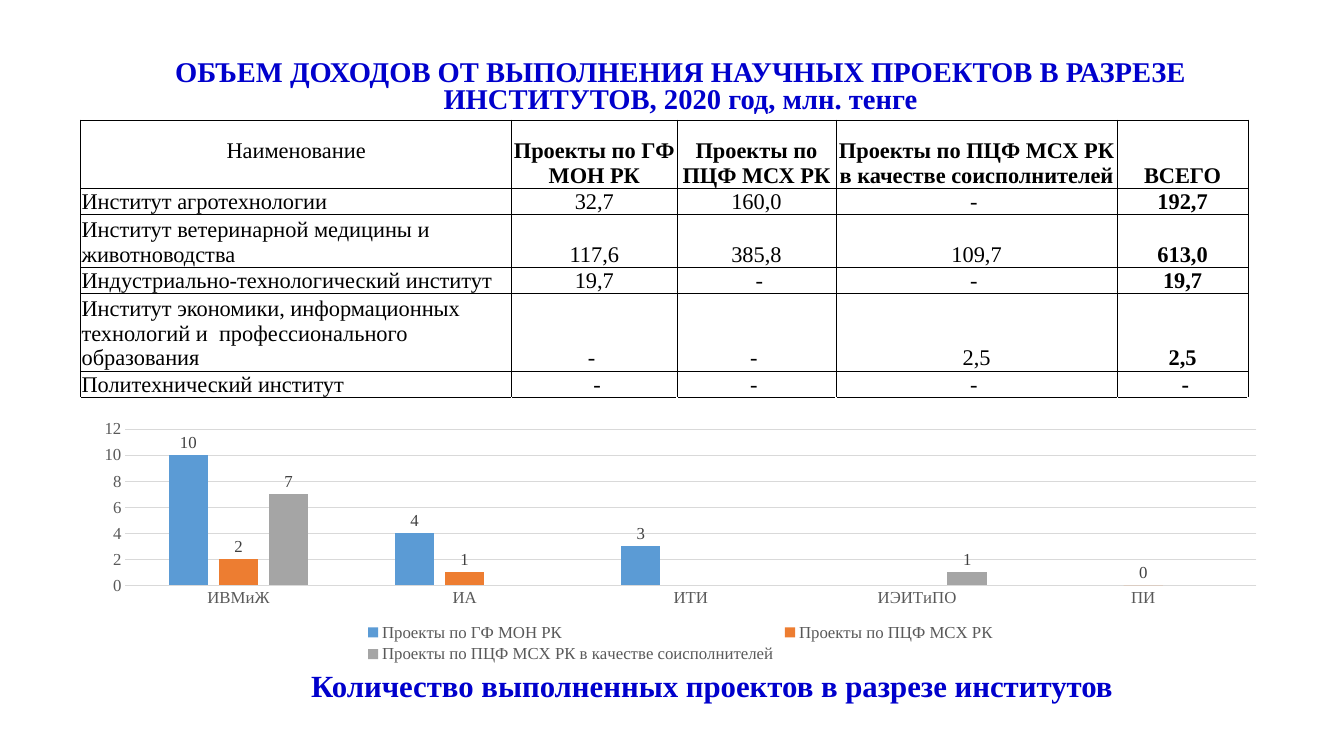
from lxml.etree import SubElement
from pptx import Presentation
from pptx.chart.data import CategoryChartData as ChartData
from pptx.dml.color import RGBColor as Rgb
from pptx.enum.chart import XL_CHART_TYPE as Kind, XL_LABEL_POSITION as Spot
from pptx.enum.chart import XL_LEGEND_POSITION as Side, XL_TICK_MARK as Tick
from pptx.enum.text import MSO_ANCHOR as Anchor, PP_ALIGN as Align
from pptx.oxml.ns import qn
from pptx.util import Inches, Pt

FACE = "Times New Roman"
COLORS = {"head": "0000CC", "text": "000000", "paper": "FFFFFF", "axis": "595959",
          "label": "404040", "grid": "D9D9D9"}
WIDE, HIGH = Inches(13.33), Inches(7.5)

FUNDS = ["Проекты по ГФ МОН РК", "Проекты по ПЦФ МСХ РК",
         "Проекты по ПЦФ МСХ РК в качестве соисполнителей"]
ROWS = [
    [" Наименование ", *FUNDS, "ВСЕГО"],
    ["Институт агротехнологии", "32,7", "160,0", "- ", "192,7"],
    ["Институт ветеринарной медицины и животноводства",
     "117,6", "385,8", "109,7", "613,0"],
    ["Индустриально-технологический институт", "19,7", " -", "- ", "19,7"],
    ["Институт экономики, информационных технологий и  профессионального образования",
     "- ", "- ", "2,5", "2,5"],
    ["Политехнический институт", " -", "- ", "- ", " -"],
    [""] * 5,
]
COLS = [4.28, 1.64, 1.58, 2.79, 1.3]
TALL = [0.68, 0.26, 0.52, 0.26, 0.77, 0.26, 0.26]
UNITS = ["ИВМиЖ", "ИА", "ИТИ", "ИЭИТиПО", "ПИ"]
COUNTS = [("5B9BD5", [10, 4, 3, None, None]),
          ("ED7D31", [2, 1, None, None, 0]),
          ("A5A5A5", [7, None, None, 1, None])]


def area(left, top, width, height):
    """Turn percentages of the slide into a box."""
    return (int(WIDE * left / 100), int(HIGH * top / 100),
            int(WIDE * width / 100), int(HIGH * height / 100))


def style(font, size, color, bold=False):
    font.name, font.size, font.bold = FACE, Pt(size), bold
    font.color.rgb = Rgb.from_string(COLORS[color])


def add_run(para, text, size, color, bold=False):
    run = para.add_run()
    run.text = text
    style(run.font, size, color, bold)


def add_head(shape, box, text, size, gap, anchor):
    shape.left, shape.top, shape.width, shape.height = box
    frame = shape.text_frame
    frame.word_wrap = True
    frame.vertical_anchor = anchor
    para = frame.paragraphs[0]
    para.alignment, para.line_spacing = Align.CENTER, gap
    add_run(para, text, size, "head", True)


def add_edges(cell, sides):
    props = cell._tc.get_or_add_tcPr()
    for side in sides:
        line = SubElement(props, qn("a:ln" + side), w=str(Pt(0.5)))
        fill = SubElement(line, qn("a:solidFill"))
        SubElement(fill, qn("a:srgbClr"), val=COLORS["text"])


def fill_cell(cell, text, row, col):
    last = row == len(ROWS) - 1
    add_edges(cell, "T" if last else "LRTB")
    cell.fill.solid()
    cell.fill.fore_color.rgb = Rgb.from_string(COLORS["paper"])
    cell.margin_left = cell.margin_right = cell.margin_top = Inches(0.01)
    corner = row == col == 0
    cell.margin_bottom = Inches(0.25 if corner else 0)
    cell.vertical_anchor = Anchor.BOTTOM
    para = cell.text_frame.paragraphs[0]
    para.alignment = Align.CENTER if col or corner else Align.LEFT
    if text:
        bold = col == len(COLS) - 1 or (row == 0 and col > 0)
        add_run(para, text, 16, "text", bold)


def add_income(slide, box):
    table = slide.shapes.add_table(len(ROWS), len(COLS), *box).table
    table.first_row = table.horz_banding = False
    for col, part in zip(table.columns, COLS):
        col.width = int(box[2] * part / sum(COLS))
    for row, part in zip(table.rows, TALL):
        row.height = int(box[3] * part / sum(TALL))
    for r, texts in enumerate(ROWS):
        for c, text in enumerate(texts):
            fill_cell(table.cell(r, c), text, r, c)


def rule(line):
    line.color.rgb = Rgb.from_string(COLORS["grid"])
    line.width = Pt(0.75)


def add_counts(slide, box):
    data = ChartData()
    data.categories = UNITS
    for name, (_, vals) in zip(FUNDS, COUNTS):
        data.add_series(name, vals)
    chart = slide.shapes.add_chart(Kind.COLUMN_CLUSTERED, *box, data).chart
    style(chart.font, 12, "text")
    chart.has_title = False
    chart.has_legend = True
    chart.legend.position = Side.BOTTOM
    chart.legend.include_in_layout = False
    style(chart.legend.font, 12, "axis")
    cats, vals = chart.category_axis, chart.value_axis
    for axis in (cats, vals):
        axis.major_tick_mark = axis.minor_tick_mark = Tick.NONE
        style(axis.tick_labels.font, 12, "axis")
    rule(cats.format.line)
    vals.format.line.fill.background()
    vals.has_major_gridlines = True
    rule(vals.major_gridlines.format.line)
    plot = chart.plots[0]
    plot.gap_width, plot.overlap = 219, -27
    plot.vary_by_categories = False
    for bars, (color, _) in zip(plot.series, COUNTS):
        bars.format.fill.solid()
        bars.format.fill.fore_color.rgb = Rgb.from_string(color)
        labels = bars.data_labels
        labels.show_value = True
        labels.position = Spot.OUTSIDE_END
        style(labels.font, 12, "label")


def main():
    deck = Presentation()
    deck.slide_width, deck.slide_height = WIDE, HIGH
    slide = deck.slides.add_slide(deck.slide_layouts[5])
    add_head(slide.shapes.title, area(6, 7.2, 89.27, 8.8),
             "ОБЪЕМ ДОХОДОВ ОТ ВЫПОЛНЕНИЯ НАУЧНЫХ ПРОЕКТОВ В РАЗРЕЗЕ "
             "ИНСТИТУТОВ, 2020 год, млн. тенге", 20.4, 0.8, Anchor.MIDDLE)
    add_income(slide, area(6, 15.87, 86.87, 40.13))
    add_counts(slide, area(6, 54.93, 89.27, 33.33))
    note = area(8.33, 88.13, 89.27, 8.8)
    add_head(slide.shapes.add_textbox(*note), note,
             "Количество выполненных проектов в разрезе институтов",
             22, 0.9, Anchor.TOP)
    deck.save("out.pptx")


if __name__ == "__main__":
    main()
